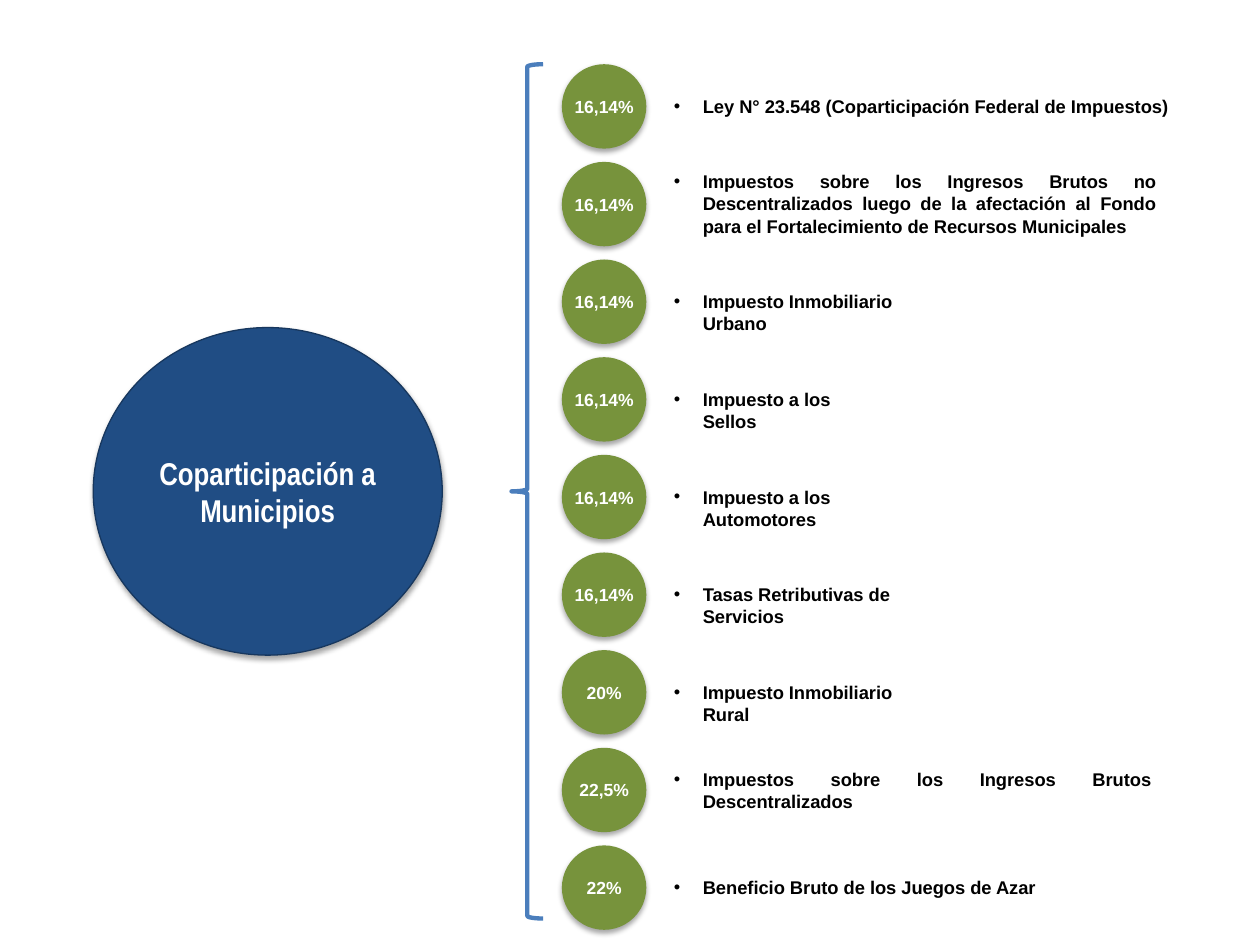
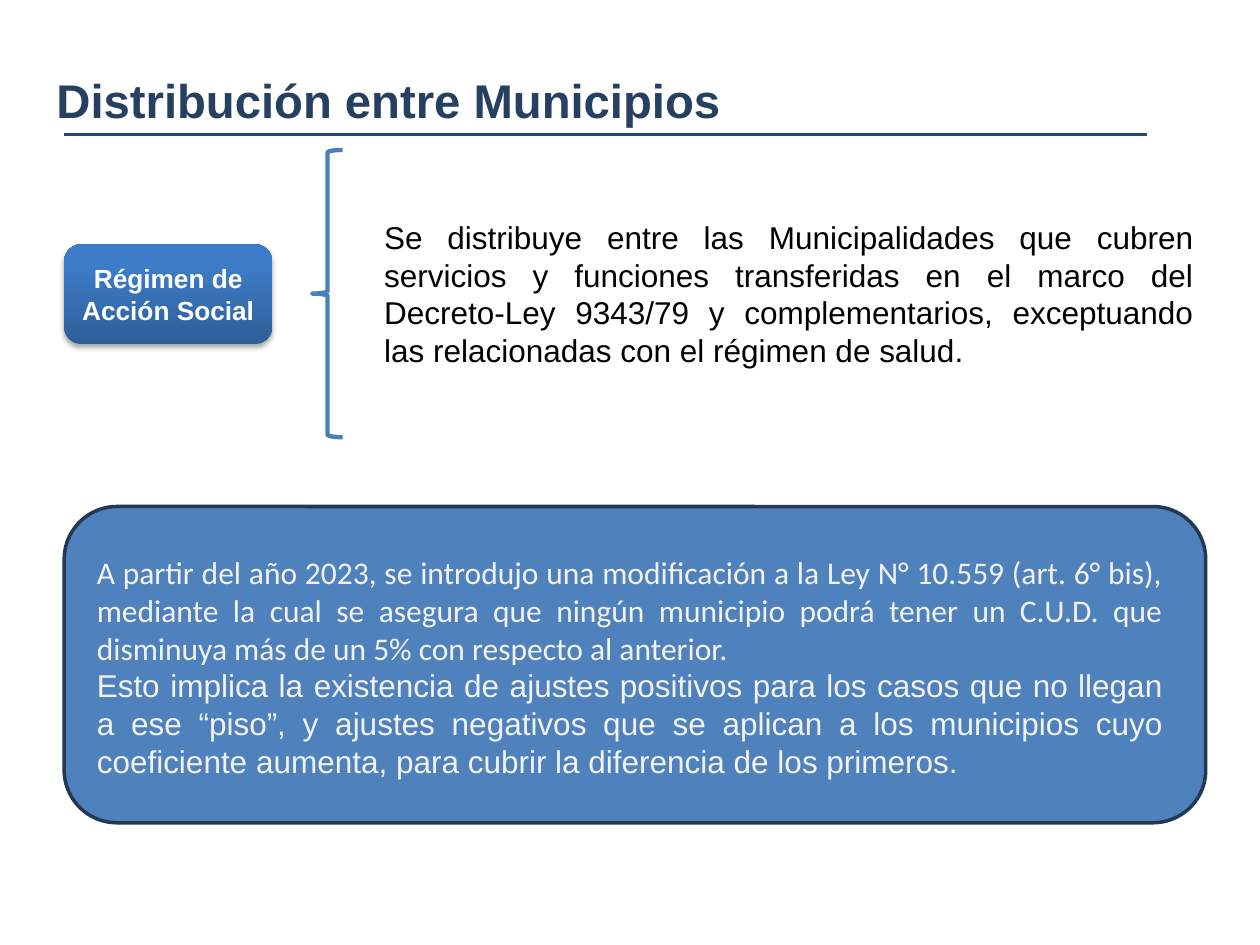
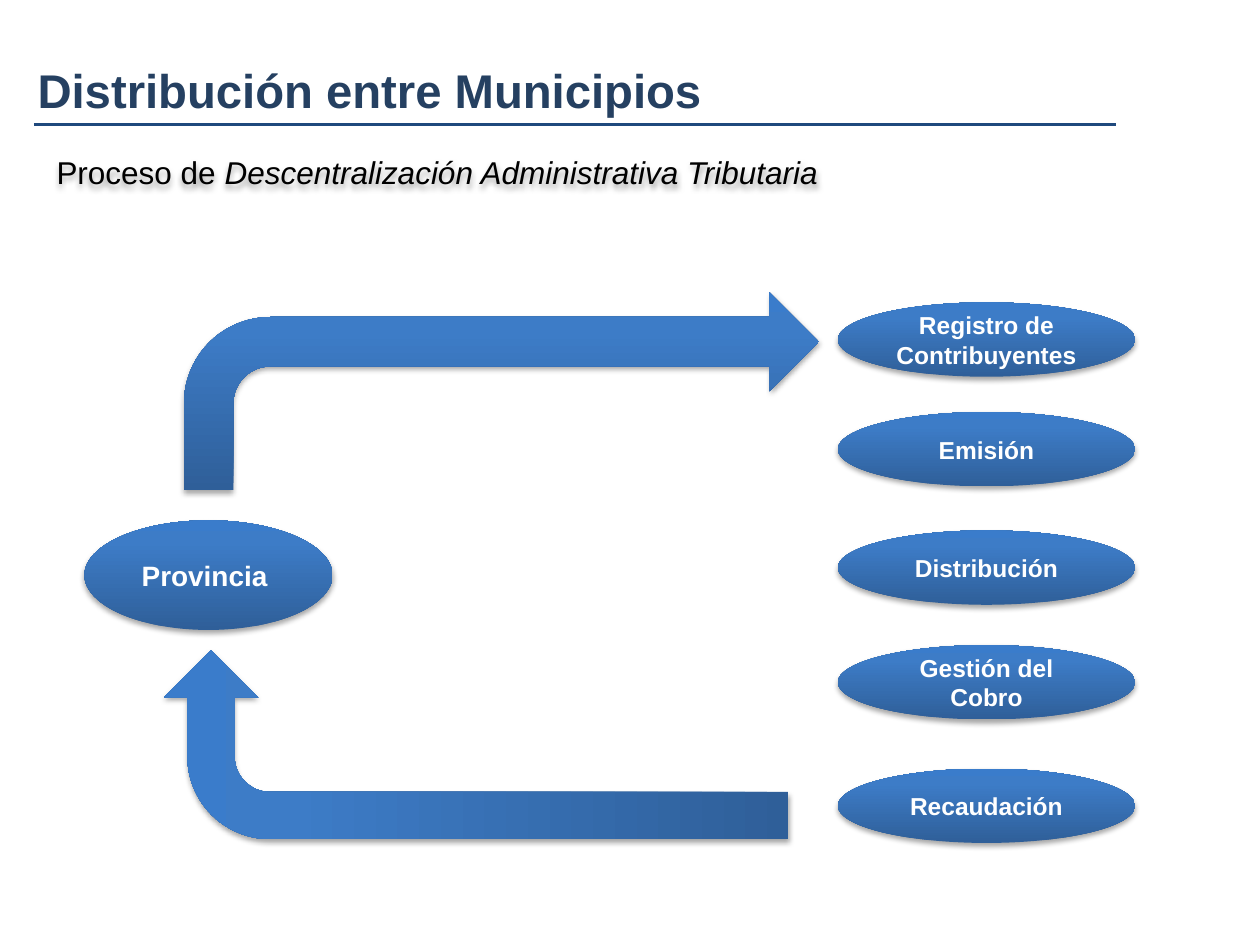
from copy import deepcopy

from lxml import etree
from pptx import Presentation
from pptx.dml.color import RGBColor
from pptx.enum.shapes import MSO_CONNECTOR, MSO_SHAPE
from pptx.enum.text import MSO_ANCHOR, PP_ALIGN
from pptx.oxml.ns import qn
from pptx.util import Inches, Pt

ELLIPSE = MSO_SHAPE.OVAL
ROUNDED = MSO_SHAPE.ROUNDED_RECTANGLE
BRACE = MSO_SHAPE.LEFT_BRACE
BENT_ARROW = MSO_SHAPE.BENT_ARROW
STRAIGHT = MSO_CONNECTOR.STRAIGHT
LEFT, CENTER, JUSTIFY = PP_ALIGN.LEFT, PP_ALIGN.CENTER, PP_ALIGN.JUSTIFY
TOP, MIDDLE = MSO_ANCHOR.TOP, MSO_ANCHOR.MIDDLE

WHITE, BLACK, PALE = "FFFFFF", "000000", "F2F2F2"
NAVY, NAVY_EDGE, GREEN = "204D84", "17375E", "77933C"
TITLE_BLUE, RULE_BLUE, BRACE_BLUE = "254061", "1F497D", "4B7EBC"
NOTE_BLUE, NOTE_EDGE = "4F81BD", "233953"
GLOSS = [(0, "2F5F99"), (0.8, "3D7CC7"), (1, "3A7CCB")]

TITLE = "Distribución entre Municipios"
RULE_LENGTH = 8.59
CIRCLE = 0.67
HANGING = 0.23

TAXES = [
    ("16,14%", "Ley N° 23.548 (Coparticipación Federal de Impuestos)", 4.23, 0.28, LEFT),
    ("16,14%", "Impuestos sobre los Ingresos Brutos no Descentralizados luego de la "
     "afectación al Fondo para el Fortalecimiento de Recursos Municipales", 4.03, 0.63, JUSTIFY),
    ("16,14%", "Impuesto Inmobiliario Urbano", 2.33, 0.28, LEFT),
    ("16,14%", "Impuesto a los Sellos", 1.76, 0.28, LEFT),
    ("16,14%", "Impuesto a los Automotores", 2.24, 0.28, LEFT),
    ("16,14%", "Tasas Retributivas de Servicios", 2.47, 0.28, LEFT),
    ("20%", "Impuesto Inmobiliario Rural", 2.2, 0.28, LEFT),
    ("22,5%", "Impuestos sobre los Ingresos Brutos Descentralizados", 3.99, 0.45, JUSTIFY),
    ("22%", "Beneficio Bruto de los Juegos de Azar", 4.21, 0.28, JUSTIFY),
]
STAGES = [
    (2.4, "Registro de Contribuyentes"),
    (3.27, "Emisión"),
    (4.21, "Distribución"),
    (5.12, "Gestión del Cobro"),
    (6.1, "Recaudación"),
]
SOCIAL = ("Se distribuye entre las Municipalidades que cubren servicios y funciones "
          "transferidas en el marco del Decreto-Ley 9343/79 y complementarios, "
          "exceptuando las relacionadas con el régimen de salud.")
FLOOR_RULE = ("A partir del año 2023, se introdujo una modificación a la Ley N° 10.559 "
              "(art. 6° bis), mediante la cual se asegura que ningún municipio podrá tener "
              "un C.U.D. que disminuya más de un 5% con respecto al anterior.")
FLOOR_EFFECT = ("Esto implica la existencia de ajustes positivos para los casos que no "
                "llegan a ese “piso”, y ajustes negativos que se aplican a los municipios "
                "cuyo coeficiente aumenta, para cubrir la diferencia de los primeros.")


def rgb(value):
    """Turn a hex string into a colour."""
    return RGBColor.from_string(value)


def inches(box):
    """Turn a left, top, width, height box into lengths."""
    return [Inches(value) for value in box]


def add_bullet(paragraph):
    """Give a paragraph a hanging round bullet."""
    properties = paragraph._p.get_or_add_pPr()
    properties.set("marL", str(Inches(HANGING)))
    properties.set("indent", str(-Inches(HANGING)))
    etree.SubElement(properties, qn("a:buFont"), typeface="Arial")
    etree.SubElement(properties, qn("a:buChar"), char="•")


def write(frame, *paragraphs, size, color=BLACK, font="Arial", bold=False, align=LEFT,
          anchor=TOP, inset=(0.1, 0.05), bullet=False):
    """Write paragraphs, each a list of (text, font overrides) runs, into a frame."""
    frame.word_wrap = True
    frame.vertical_anchor = anchor
    frame.margin_left = frame.margin_right = Inches(inset[0])
    frame.margin_top = frame.margin_bottom = Inches(inset[1])
    for index, runs in enumerate(paragraphs):
        paragraph = frame.add_paragraph() if index else frame.paragraphs[0]
        paragraph.alignment = align
        if bullet:
            add_bullet(paragraph)
        for words, overrides in runs:
            run = paragraph.add_run()
            run.text = words
            run.font.name, run.font.size, run.font.bold = font, Pt(size), bold
            run.font.color.rgb = rgb(color)
            for key, value in overrides.items():
                setattr(run.font, key, value)


def add_text(slide, box, *paragraphs, **style):
    """Add a text box; a plain string is a paragraph of one run."""
    area = slide.shapes.add_textbox(*inches(box))
    write(area.text_frame, *[[(p, {})] if isinstance(p, str) else p for p in paragraphs], **style)
    return area


def cast_shadow(shape):
    """Give a shape a soft shadow straight below it."""
    shape.shadow.inherit = False
    effects = shape._element.spPr.find(qn("a:effectLst"))
    outer = etree.SubElement(effects, qn("a:outerShdw"), blurRad=str(Pt(3.1)),
                             dist=str(Pt(1.8)), dir="5400000", rotWithShape="0")
    tint = etree.SubElement(outer, qn("a:srgbClr"), val=BLACK)
    etree.SubElement(tint, qn("a:alpha"), val="35000")


def fill_gloss(shape):
    """Fill a shape with the blue gradient, dark at the foot."""
    shape.fill.gradient()
    shape.fill.gradient_angle = 90
    stops = shape._element.spPr.find(".//" + qn("a:gsLst"))
    stops.append(deepcopy(stops[0]))
    for stop, (position, color) in zip(shape.fill.gradient_stops, GLOSS):
        stop.position = position
        stop.color.rgb = rgb(color)


def add_figure(slide, kind, box, fill=None, line=None, shadow=False, label=None, **style):
    """Add a preset shape with its fill, outline, shadow and centred label."""
    figure = slide.shapes.add_shape(kind, *inches(box))
    if fill == GLOSS:
        fill_gloss(figure)
    elif fill:
        figure.fill.solid()
        figure.fill.fore_color.rgb = rgb(fill)
    else:
        figure.fill.background()
    if line:
        figure.line.color.rgb = rgb(line[0])
        figure.line.width = Pt(line[1])
    else:
        figure.line.fill.background()
    if shadow:
        cast_shadow(figure)
    else:
        figure.shadow.inherit = False
    if label:
        write(figure.text_frame, [(label, {})], color=WHITE, bold=True, align=CENTER,
              anchor=MIDDLE, **style)
    return figure


def add_brace(slide, box):
    """Add a blue left brace."""
    add_figure(slide, BRACE, box, line=(BRACE_BLUE, 2.5))


def add_gloss(slide, kind, box, label=None, **style):
    """Add a shadowed shape with the blue gradient."""
    return add_figure(slide, kind, box, GLOSS, shadow=True, label=label, **style)


def add_heading(slide, left, top, rule_left):
    """Add the slide title and the rule beneath it."""
    add_text(slide, (left, top, 8.8, 0.56), TITLE, size=27, color=TITLE_BLUE, bold=True)
    height = Inches(top + 0.55)
    rule = slide.shapes.add_connector(STRAIGHT, Inches(rule_left), height,
                                      Inches(rule_left + RULE_LENGTH), height)
    rule.line.color.rgb = rgb(RULE_BLUE)
    rule.line.width = Pt(1.5)
    etree.SubElement(rule._element.spPr, qn("a:effectLst"))


def add_tax_list(slide, left, top, height):
    """Spread the percentage circles evenly over a height, each beside its tax."""
    step = (height - CIRCLE) / (len(TAXES) - 1)
    for row, (share, tax, width, label_height, align) in enumerate(TAXES):
        row_top = top + row * step
        add_figure(slide, ELLIPSE, (left, row_top, CIRCLE, CIRCLE), GREEN, shadow=True,
                   label=share, size=10, inset=(0, 0))
        label_top = row_top + (CIRCLE - label_height) / 2
        add_text(slide, (left + 0.79, label_top, width, label_height), tax, size=10.5,
                 bold=True, align=align, bullet=True)


def add_social_regime(slide, left, top, height):
    """Add the regime block, its brace and its explanation, centred on a height."""
    middle = top + height / 2
    add_brace(slide, (left + 1.97, top, 0.24, height))
    add_gloss(slide, ROUNDED, (left, middle - 0.39, 1.65, 0.79), "Régimen de Acción Social",
              size=15, inset=(0.05, 0.05))
    add_text(slide, (left + 2.44, middle - 0.65, 6.62, 1.31), SOCIAL, size=18, align=JUSTIFY)


def add_floor_note(slide, left, top, width, height):
    """Add the rounded panel on the floor for the coefficient."""
    add_figure(slide, ROUNDED, (left, top, width, height), NOTE_BLUE, (NOTE_EDGE, 2))
    add_text(slide, (left + 0.16, top + 0.32, width - 0.4, height - 0.59),
             [(FLOOR_RULE, {"name": "Calibri"})], FLOOR_EFFECT,
             size=18, color=PALE, align=JUSTIFY)


def build_shares(slide):
    """Build the slide on the shares that reach the municipalities."""
    add_figure(slide, ELLIPSE, (0.74, 2.6, 2.77, 2.6), NAVY, (NAVY_EDGE, 0.75), True,
               "Coparticipación a Municipios", size=18, font="Arial Narrow", inset=(0.08, 0.04))
    add_brace(slide, (4.06, 0.51, 0.25, 6.78))
    add_tax_list(slide, 4.46, 0.51, 6.87)


def build_social(slide):
    """Build the slide on the social action regime."""
    add_heading(slide, 0.35, 0.52, 0.51)
    add_social_regime(slide, 0.51, 1.19, 2.28)
    add_floor_note(slide, 0.51, 4.02, 9.06, 2.51)


def build_process(slide):
    """Build the slide on the decentralised tax process."""
    add_heading(slide, 0.2, 0.44, 0.27)
    process = add_text(slide, (0.35, 1.15, 9.21, 0.43),
                       [("Proceso de ", {}),
                        ("Descentralización Administrativa Tributaria", {"italic": True})],
                       size=18, align=JUSTIFY, anchor=MIDDLE)
    cast_shadow(process)
    add_gloss(slide, ELLIPSE, (0.67, 4.13, 1.97, 0.87), "Provincia ", size=16)
    add_gloss(slide, BENT_ARROW, (1.46, 2.32, 5.04, 1.57))
    add_gloss(slide, BENT_ARROW, (3.03, 3.43, 1.5, 4.96)).rotation = 270
    for top, stage in STAGES:
        add_gloss(slide, ELLIPSE, (6.65, top, 2.36, 0.59), stage, size=14)


def main():
    """Build and save the presentation."""
    deck = Presentation()
    deck.slide_width, deck.slide_height = Inches(10), Inches(7.5)
    for build in (build_shares, build_social, build_process):
        build(deck.slides.add_slide(deck.slide_layouts[6]))
    deck.save("out.pptx")


if __name__ == "__main__":
    main()
